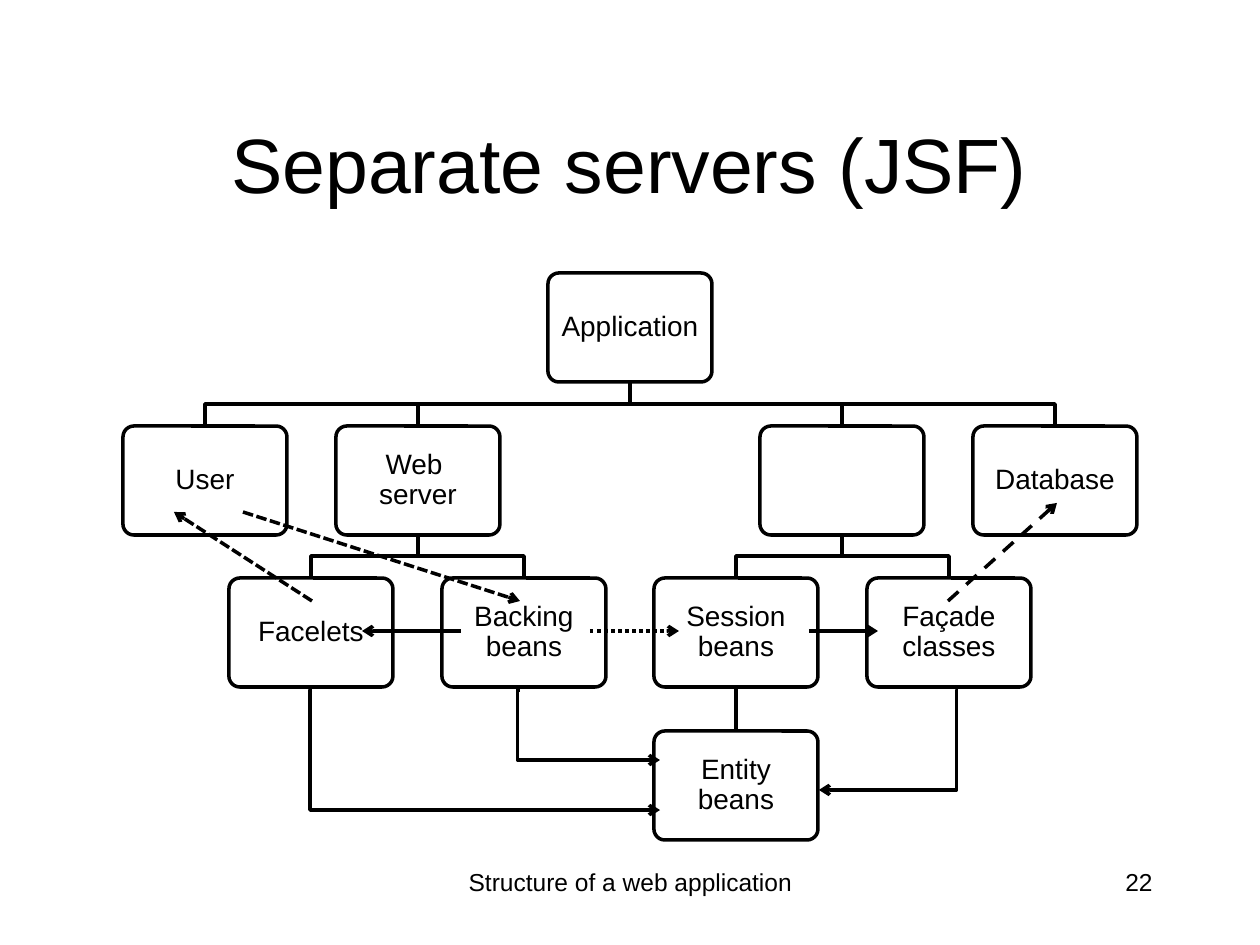
from lxml import etree
from pptx import Presentation
from pptx.dml.color import RGBColor
from pptx.enum.dml import MSO_LINE
from pptx.enum.shapes import MSO_CONNECTOR, MSO_SHAPE
from pptx.enum.text import MSO_ANCHOR, PP_ALIGN
from pptx.oxml.ns import qn
from pptx.util import Pt

SCALE = 914400 / 126
BLACK, WHITE = "000000", "FFFFFF"
STRAIGHT, ELBOW = MSO_CONNECTOR.STRAIGHT, MSO_CONNECTOR.ELBOW
LONG, SHORT, DOT = MSO_LINE.DASH, MSO_LINE.SQUARE_DOT, MSO_LINE.ROUND_DOT
ROUND = MSO_SHAPE.ROUNDED_RECTANGLE
CENTER, RIGHT = PP_ALIGN.CENTER, PP_ALIGN.RIGHT
TOP, MIDDLE = MSO_ANCHOR.TOP, MSO_ANCHOR.MIDDLE
BOX_W, BOX_H = 164, 109

# name: (text, half columns from the centre, row, parent)
NODES = {
    "app": ("Application", 0, 0, None),
    "user": ("User", -4, 1, "app"),
    "web": ("Web \vserver", -2, 1, "app"),
    "facelets": ("Facelets", -3, 2, "web"),
    "backing": ("Backing beans", -1, 2, "web"),
    "server": ("", 2, 1, "app"),
    "session": ("Session beans", 1, 2, "server"),
    "entity": ("Entity beans", 1, 3, "session"),
    "facade": ("Façade classes", 3, 2, "server"),
    "database": ("Database", 4, 1, "app"),
}

# start, end, dash
ARROWS = [
    ((948, 601), (1057, 503), LONG),
    ((243, 512), (520, 601), SHORT),
    ((312, 601), (174, 512), SHORT),
    ((590, 631), (679, 631), DOT),
    ((461, 631), (362, 631), None),
    ((809, 631), (878, 631), None),
]

# start, end, place of the bend in 1/100000 of the width
ELBOWS = [
    ((312, 690), (660, 810), -600),
    ((520, 690), (660, 760), -1800),
    ((957, 690), (819, 790), 200),
]


def px(num):
    return round(num * SCALE)


def color(code):
    return RGBColor.from_string(code)


def place(name):
    """Give the centre x and the top y of a node."""
    _, col, row, _ = NODES[name]
    return 630 + round(col * 425 / 4), 273 + round(row * 458 / 3)


def write(shape, text, size=16, align=CENTER, anchor=MIDDLE, space=None, inset=None):
    frame = shape.text_frame
    frame.word_wrap = True
    frame.vertical_anchor = anchor
    if inset is not None:
        frame.margin_left = frame.margin_right = px(inset)
        frame.margin_top = frame.margin_bottom = px(inset)
    para = frame.paragraphs[0]
    para.text = text
    para.alignment = align
    para.line_spacing = space
    for run in para.runs:
        run.font.size = Pt(size)
        run.font.name = "Arial"
        run.font.color.rgb = color(BLACK)


def ink(shape, dash=None):
    shape.line.color.rgb = color(BLACK)
    shape.line.width = Pt(2)
    if dash is not None:
        shape.line.dash_style = dash


def add_title(slide, text):
    title = slide.shapes.title
    title.left, title.top = px(94), px(84)
    title.width, title.height = px(1071), px(158)
    write(title, text, size=44)


def add_node(slide, name):
    mid, top = place(name)
    box = slide.shapes.add_shape(
        ROUND, px(mid - BOX_W / 2), px(top), px(BOX_W), px(BOX_H))
    box.adjustments[0] = 0.1
    box.shadow.inherit = False
    box.fill.solid()
    box.fill.fore_color.rgb = color(WHITE)
    ink(box)
    text = NODES[name][0]
    if text:
        write(box, text, space=0.9, inset=6)


def add_branch(slide, name, parent):
    """Link a node to its parent, with a bend halfway down the gap."""
    x1, y1 = place(parent)
    x2, y2 = place(name)
    y1 += BOX_H
    half = (y1 + y2) // 2
    points = [(x1, half), (x2, half), (x2, y2)] if x1 != x2 else [(x2, y2)]
    form = slide.shapes.build_freeform(x1, y1, scale=SCALE)
    form.add_line_segments(points, close=False)
    link = form.convert_to_shape()
    link.shadow.inherit = False
    link.fill.background()
    ink(link)


def add_arrow(slide, start, end, kind=STRAIGHT, dash=None, bend=None):
    line = slide.shapes.add_connector(kind, *map(px, start + end))
    ink(line, dash)
    props = line._element.spPr
    tail = etree.SubElement(props.find(qn("a:ln")), qn("a:tailEnd"))
    tail.set("type", "arrow")
    etree.SubElement(props, qn("a:effectLst"))
    if bend is not None:
        guides = props.find(qn("a:prstGeom")).find(qn("a:avLst"))
        guide = etree.SubElement(guides, qn("a:gd"))
        guide.set("name", "adj1")
        guide.set("fmla", f"val {bend}")


def add_label(slide, text, left, width, align):
    label = slide.shapes.add_textbox(px(left), px(861), px(width), px(63))
    write(label, text, size=14, align=align, anchor=TOP)


def main():
    deck = Presentation()
    deck.slide_width, deck.slide_height = px(1260), px(945)
    slide = deck.slides.add_slide(deck.slide_layouts[5])
    add_title(slide, "Separate servers (JSF)")
    for name, (_, _, _, parent) in NODES.items():
        if parent:
            add_branch(slide, name, parent)
    for name in NODES:
        add_node(slide, name)
    add_label(slide, "Structure of a web application", 431, 399, CENTER)
    add_label(slide, "22", 903, 262, RIGHT)
    for start, end, bend in ELBOWS:
        add_arrow(slide, start, end, kind=ELBOW, bend=bend)
    for start, end, dash in ARROWS:
        add_arrow(slide, start, end, dash=dash)
    deck.save("out.pptx")


if __name__ == "__main__":
    main()
